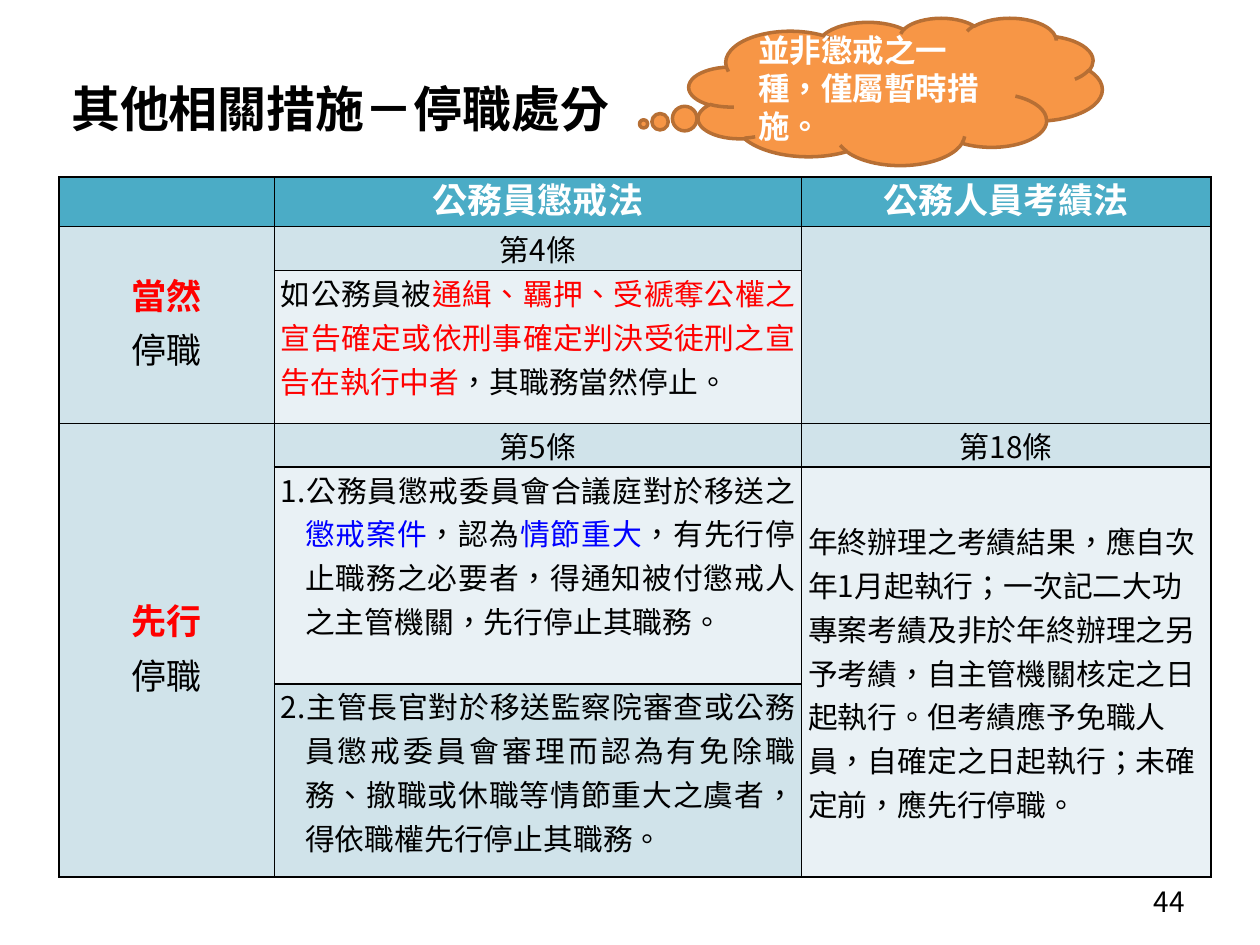
"""Build the slide on suspension from duty, with its table and cloud note."""
from lxml.etree import SubElement
from pptx import Presentation
from pptx.dml.color import RGBColor
from pptx.enum.shapes import MSO_SHAPE
from pptx.enum.text import MSO_ANCHOR, PP_ALIGN
from pptx.oxml.ns import qn
from pptx.util import Cm, Pt

INK = {"black": "000000", "white": "FFFFFF", "red": "FF0000", "blue": "0000FF",
       "head": "4BACC6", "mid": "D0E3EA", "pale": "E9F1F5",
       "cloud": "F79646", "edge": "B76F34"}
TC, SC = "Noto Sans CJK TC", "Noto Sans CJK SC"
LEFT, MID, RIGHT, JUST = PP_ALIGN.LEFT, PP_ALIGN.CENTER, PP_ALIGN.RIGHT, PP_ALIGN.JUSTIFY


def tint(name):
    return RGBColor.from_string(INK[name])


def add_run(para, text, size, color="black", bold=False, face=SC):
    para._p.get_or_add_pPr().set("hangingPunct", "0")
    run = para.add_run()
    run.text = text
    font = run.font
    font.size, font.bold, font.name = Pt(size), bold, face
    font.color.rgb = tint(color)
    font._element.set("lang", "zh-TW")
    SubElement(font._element, qn("a:ea"), typeface=face)


deck = Presentation()
deck.slide_width, deck.slide_height = Cm(25.4), Cm(19.05)
slide = deck.slides.add_slide(deck.slide_layouts[6])

labels = [
    ((-4.57, 0.58, 22.86, 3.18), "其他相關措施－停職處分", 28, True, MID),
    ((18.21, 17.65, 5.92, 1.02), "44", 16, False, RIGHT),
]
for place, text, size, bold, align in labels:
    frame = slide.shapes.add_textbox(*map(Cm, place)).text_frame
    frame.word_wrap = True
    frame.vertical_anchor = MSO_ANCHOR.MIDDLE
    para = frame.paragraphs[0]
    para.alignment = align
    add_run(para, text, size, bold=bold, face=TC)

cols = [4.34, 10.63, 8.25]
rows = [1, 0.88, 3.08, 0.88, 4.37, 3.89]
table = slide.shapes.add_table(len(rows), len(cols), Cm(1.19), Cm(3.57),
                               Cm(sum(cols)), Cm(sum(rows))).table
for col, width in zip(table.columns, cols):
    col.width = Cm(width)
for row, height in zip(table.rows, rows):
    row.height = Cm(height)

fills = [["head", "head", "head"], ["mid", "mid", "mid"], ["mid", "pale", "mid"],
         ["mid", "mid", "mid"], ["mid", "pale", "pale"], ["mid", "mid", "pale"]]
for row, names in enumerate(fills):
    for col, name in enumerate(names):
        cell = table.cell(row, col)
        cell.margin_left = cell.margin_right = Cm(0.13)
        cell.margin_top = cell.margin_bottom = 0
        cell.text_frame.paragraphs[0].line_spacing = Pt(25)
        props = cell._tc.get_or_add_tcPr()
        for side in ("lnL", "lnR", "lnT", "lnB"):
            line = SubElement(props, qn("a:" + side), w=str(Pt(1)))
            solid = SubElement(line, qn("a:solidFill"))
            SubElement(solid, qn("a:srgbClr"), val=INK["black"])
        cell.fill.solid()
        cell.fill.fore_color.rgb = tint(name)

for top, end, col in [(1, 2, 0), (1, 2, 2), (3, 5, 0), (4, 5, 2)]:
    table.cell(top, col).merge(table.cell(end, col))

TOP, CENTER = MSO_ANCHOR.TOP, MSO_ANCHOR.MIDDLE
cells = [
    (0, 1, MID, CENTER, 0, [[("公務員懲戒法", 20, "white", True)]]),
    (0, 2, MID, CENTER, 0, [[("公務人員考績法", 20, "white", True)]]),
    (1, 0, MID, CENTER, 0, [[("當然", 20, "red", True)], [("停職", 20)]]),
    (1, 1, MID, TOP, 0, [[("第4條", 17)]]),
    (2, 1, JUST, TOP, 0, [[
        ("如公務員被", 17),
        ("通緝、羈押、受褫奪公權之宣告確定或依刑事確定判決受徒刑之宣告在執行中者", 17, "red"),
        ("，其職務當然停止。", 17)]]),
    (3, 0, MID, CENTER, 0, [[("先行", 20, "red", True)], [("停職", 20)]]),
    (3, 1, MID, CENTER, 0, [[("第5條", 17)]]),
    (3, 2, MID, CENTER, 0, [[("第18條", 17)]]),
    (4, 1, JUST, TOP, 0.49, [[
        ("1.公務員懲戒委員會合議庭對於移送之", 17),
        ("懲戒案件", 17, "blue"),
        ("，認為", 17),
        ("情節重大", 17, "blue"),
        ("，有先行停止職務之必要者，得通知被付懲戒人之主管機關，先行停止其職務。", 17)]]),
    (4, 2, LEFT, CENTER, 0, [[
        ("年終辦理之考績結果，應自次年1月起執行；一次記二大功專案考績及非於年終辦理之"
         "另予考績，自主管機關核定之日起執行。但考績應予免職人員，自確定之日起執行；"
         "未確定前，應先行停職。", 17)]]),
    (5, 1, JUST, TOP, 0.49, [[
        ("2.主管長官對於移送監察院審查或公務員懲戒委員會審理而認為有免除職務、撤職或"
         "休職等情節重大之虞者，得依職權先行停止其職務。", 17)]]),
]
for row, col, align, anchor, hang, paras in cells:
    cell = table.cell(row, col)
    cell.vertical_anchor = anchor
    frame = cell.text_frame
    for index, runs in enumerate(paras):
        para = frame.add_paragraph() if index else frame.paragraphs[0]
        para.alignment = align
        para.line_spacing = Pt(25)
        if index:
            para.space_before = Pt(6)
        if hang:
            props = para._p.get_or_add_pPr()
            props.set("marL", str(Cm(hang)))
            props.set("indent", str(-Cm(hang)))
        for run in runs:
            add_run(para, *run)

cloud = slide.shapes.add_shape(MSO_SHAPE.CLOUD_CALLOUT, Cm(13.89), Cm(0.36),
                               Cm(8.33), Cm(2.97))
cloud.adjustments[0], cloud.adjustments[1] = -0.61, 0.22
cloud.shadow.inherit = False
cloud.fill.solid()
cloud.fill.fore_color.rgb = tint("cloud")
cloud.line.color.rgb = tint("edge")
cloud.line.width = Pt(2)
frame = cloud.text_frame
frame.word_wrap = True
frame.vertical_anchor = CENTER
para = frame.paragraphs[0]
para.alignment = LEFT
add_run(para, "並非懲戒之一種，僅屬暫時措施。", 18, "white", True)

deck.save("out.pptx")
